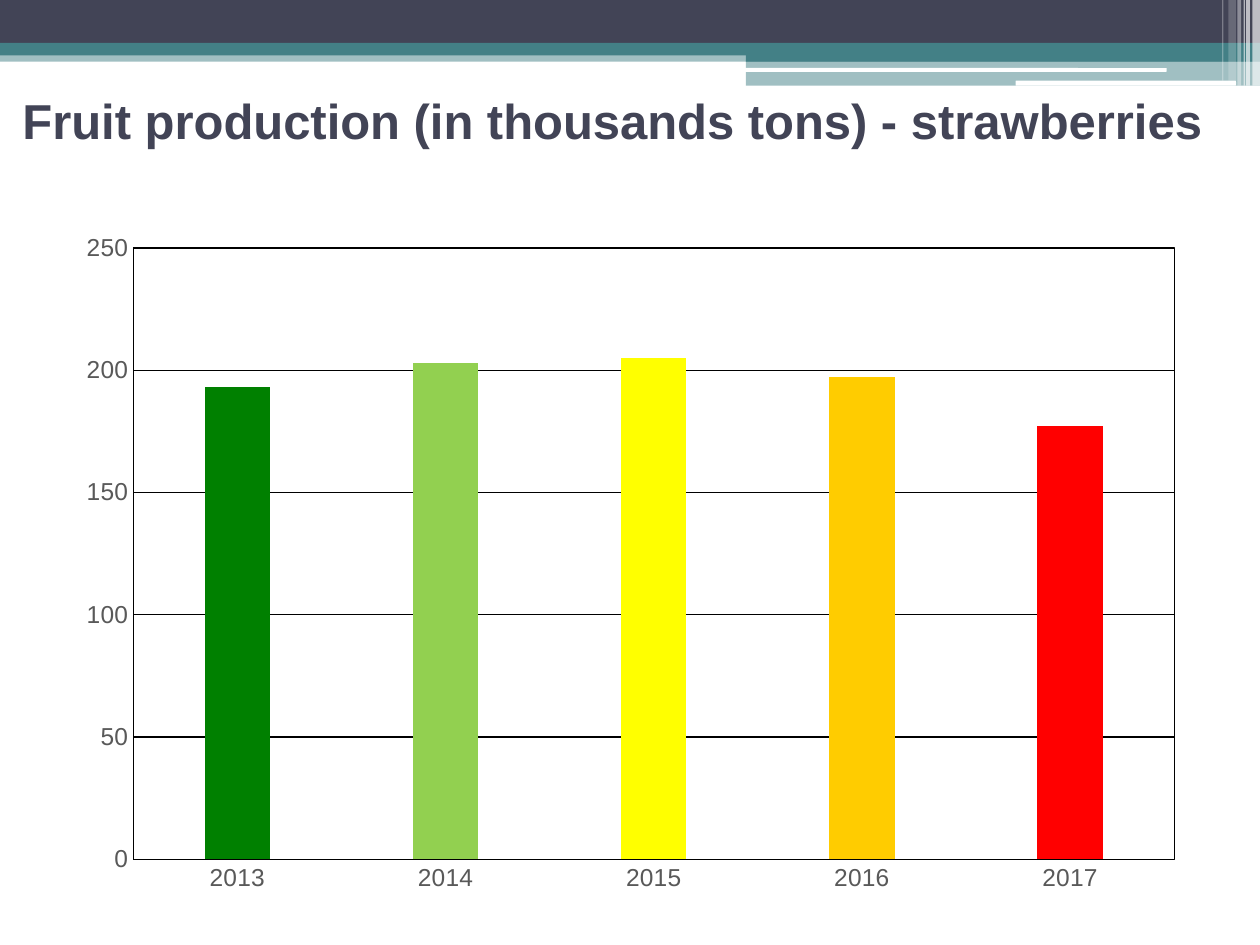
import pptx
import pptx.chart.data
import pptx.dml.color
import pptx.enum.chart
import pptx.enum.shapes
import pptx.enum.text
import pptx.oxml
import pptx.oxml.ns
import pptx.util
from lxml import etree

Inches, Pt = pptx.util.Inches, pptx.util.Pt
RGBColor = pptx.dml.color.RGBColor
qn = pptx.oxml.ns.qn

NAVY = RGBColor(0x42, 0x44, 0x56)
TEAL = RGBColor(0x43, 0x80, 0x86)
WHITE = RGBColor(0xFF, 0xFF, 0xFF)
BLACK = RGBColor(0, 0, 0)
GRAY = RGBColor(0x59, 0x59, 0x59)

TITLE = "Fruit production (in thousands tons) - strawberries"

# Year, production, bar colour
PRODUCTION = [
    ("2013", 193, RGBColor(0x00, 0x80, 0x00)),
    ("2014", 203, RGBColor(0x92, 0xD0, 0x50)),
    ("2015", 205, RGBColor(0xFF, 0xFF, 0x00)),
    ("2016", 197, RGBColor(0xFF, 0xCC, 0x00)),
    ("2017", 177, RGBColor(0xFF, 0x00, 0x00)),
]

# Left, top, width, height, colour, opacity in percent
HEADER_BANDS = [
    (0, 0.4, 10, 0.09, TEAL, 50),
    (0, 0, 10, 0.34, NAVY, 100),
    (0, 0.34, 10, 0.1, TEAL, 100),
    (5.92, 0.39, 4.08, 0.1, TEAL, 100),
    (5.92, 0.48, 4.08, 0.2, TEAL, 50),
]
ROUNDED_BARS = [
    (5.91, 0.54, 3.35, 0.03, WHITE, 100),
    (8.06, 0.64, 1.75, 0.04, WHITE, 100),
]
# Left, width, height, opacity of the white stripes at the right edge
EDGE_STRIPES = [
    (9.94, 0.06, 0.68, 65),
    (9.89, 0.03, 0.68, 65),
    (9.87, 0.01, 0.68, 60),
    (9.82, 0.03, 0.68, 40),
    (9.75, 0.06, 0.64, 20),
    (9.7, 0.01, 0.64, 30),
]

# Plot area as fractions of the chart frame
PLOT_LAYOUT = {"x": 0.062, "y": 0.04, "w": 0.918, "h": 0.892}

RECT = pptx.enum.shapes.MSO_SHAPE.RECTANGLE
ROUNDED = pptx.enum.shapes.MSO_SHAPE.ROUNDED_RECTANGLE


def add_band(slide, kind, left, top, width, height, color, opacity):
    band = slide.shapes.add_shape(
        kind, Inches(left), Inches(top), Inches(width), Inches(height))
    band.shadow.inherit = False
    band.line.fill.background()
    band.fill.solid()
    band.fill.fore_color.rgb = color
    if opacity < 100:
        fill_color = band.fill._xPr.find(qn("a:solidFill"))[0]
        etree.SubElement(fill_color, qn("a:alpha"), val=str(opacity * 1000))


def add_header(slide):
    for band in HEADER_BANDS:
        add_band(slide, RECT, *band)
    for bar in ROUNDED_BARS:
        add_band(slide, ROUNDED, *bar)
    for left, width, height, opacity in EDGE_STRIPES:
        add_band(slide, RECT, left, 0, width, height, WHITE, opacity)


def add_title(slide):
    frame = slide.shapes.add_textbox(
        Inches(0.08), Inches(0.58), Inches(9.75), Inches(0.75)).text_frame
    frame.word_wrap = True
    frame.vertical_anchor = pptx.enum.text.MSO_ANCHOR.MIDDLE
    title = frame.paragraphs[0].add_run()
    title.text = TITLE
    title.font.name = "Arial"
    title.font.size = Pt(28)
    title.font.bold = True
    title.font.color.rgb = NAVY


def frame_plot(chart):
    """Fix the inner plot area and outline it in black."""
    plot_area = chart._chartSpace.chart.plotArea
    for old in plot_area.findall(qn("c:layout")):
        plot_area.remove(old)
    layout = etree.Element(qn("c:layout"))
    manual = etree.SubElement(layout, qn("c:manualLayout"))
    settings = {"layoutTarget": "inner", "xMode": "edge", "yMode": "edge",
                **PLOT_LAYOUT}
    for tag, value in settings.items():
        etree.SubElement(manual, qn("c:" + tag), val=str(value))
    plot_area.insert(0, layout)
    plot_area.append(pptx.oxml.parse_xml(
        f'<c:spPr {pptx.oxml.ns.nsdecls("c", "a")}><a:noFill/><a:ln w="9525">'
        f'<a:solidFill><a:srgbClr val="{BLACK}"/></a:solidFill></a:ln></c:spPr>'))


def add_chart(slide):
    years, tons, colors = zip(*PRODUCTION)
    data = pptx.chart.data.CategoryChartData()
    data.categories = years
    data.add_series("Series 1", tons)
    chart = slide.shapes.add_chart(
        pptx.enum.chart.XL_CHART_TYPE.COLUMN_CLUSTERED,
        Inches(0.5), Inches(1.75), Inches(9), Inches(5.44), data).chart
    chart.has_title = False
    chart.has_legend = False
    chart.font.name = "Cambria"
    chart.font.size = Pt(10)
    chart.font.color.rgb = BLACK

    # Bars
    plot = chart.plots[0]
    plot.vary_by_categories = False
    plot.gap_width = 219
    plot.overlap = -27
    series = plot.series[0]
    series.format.fill.solid()
    series.format.fill.fore_color.rgb = RGBColor(0x53, 0x54, 0x8A)
    for index, color in enumerate(colors):
        fill = series.points[index].format.fill
        fill.solid()
        fill.fore_color.rgb = color

    # Axes
    years_axis, tons_axis = chart.category_axis, chart.value_axis
    for axis in (years_axis, tons_axis):
        axis.major_tick_mark = pptx.enum.chart.XL_TICK_MARK.NONE
        axis.minor_tick_mark = pptx.enum.chart.XL_TICK_MARK.NONE
        labels = axis.tick_labels.font
        labels.name = "Arial"
        labels.size = Pt(14)
        labels.color.rgb = GRAY
    tons_axis.minimum_scale, tons_axis.maximum_scale = 0, 250
    tons_axis.major_unit = 50
    tons_axis.has_major_gridlines = True
    tons_axis.format.line.fill.background()
    for line in (years_axis.format.line, tons_axis.major_gridlines.format.line):
        line.color.rgb = BLACK
        line.width = Pt(0.75)
    frame_plot(chart)


def main():
    deck = pptx.Presentation()
    deck.slide_width, deck.slide_height = Inches(10), Inches(7.5)
    slide = deck.slides.add_slide(deck.slide_layouts[6])
    add_header(slide)
    add_title(slide)
    add_chart(slide)
    deck.save("out.pptx")


if __name__ == "__main__":
    main()
